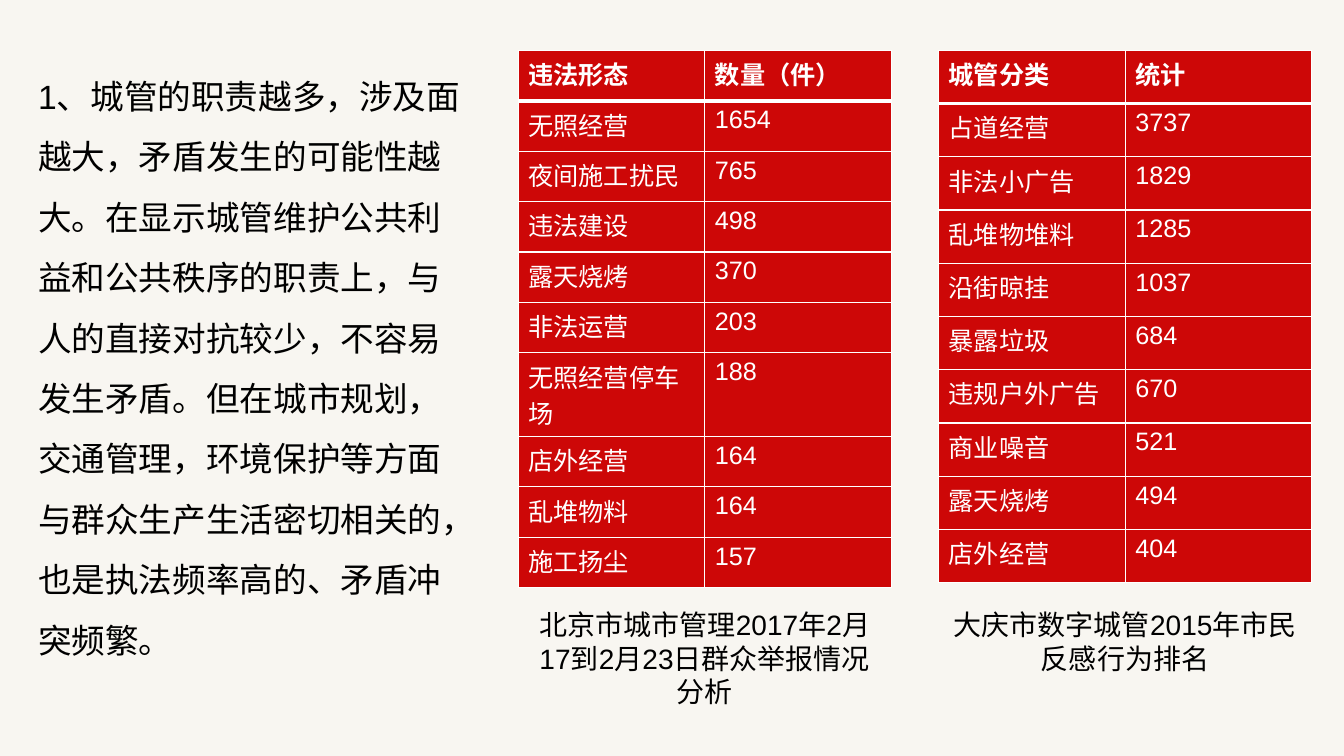
import pptx
import pptx.dml.color
import pptx.enum.text
import pptx.oxml
import pptx.oxml.ns
import pptx.util
from pptx.util import Inches

COLORS = {"paper": "F8F6F1", "red": "CD0707", "white": "FFFFFF", "black": "000000"}
FONT = "Arial"
TABLE_WIDTH = 3.7
CHARACTERS_PER_LINE = 6
EXTRA_LINE_HEIGHT = 0.33

ARGUMENT = (
    "1、城管的职责越多，涉及面越大，矛盾发生的可能性越大。"
    "在显示城管维护公共利益和公共秩序的职责上，与人的直接对抗较少，不容易发生矛盾。"
    "但在城市规划，交通管理，环境保护等方面与群众生产生活密切相关的，"
    "也是执法频率高的、矛盾冲突频繁。"
)
BEIJING_REPORTS = [
    ("违法形态", "数量（件）"),
    ("无照经营", "1654"),
    ("夜间施工扰民", "765"),
    ("违法建设", "498"),
    ("露天烧烤", "370"),
    ("非法运营", "203"),
    ("无照经营停车场", "188"),
    ("店外经营", "164"),
    ("乱堆物料", "164"),
    ("施工扬尘", "157"),
]
DAQING_RANKING = [
    ("城管分类", "统计"),
    ("占道经营", "3737"),
    ("非法小广告", "1829"),
    ("乱堆物堆料", "1285"),
    ("沿街晾挂", "1037"),
    ("暴露垃圾", "684"),
    ("违规户外广告", "670"),
    ("商业噪音", "521"),
    ("露天烧烤", "494"),
    ("店外经营", "404"),
]


def rgb(name):
    """Return the named colour."""
    return pptx.dml.color.RGBColor.from_string(COLORS[name])


def add_span(para, text, size, color, bold=False):
    """Add one formatted run to a paragraph."""
    span = para.add_run()
    span.text = text
    span.font.name = FONT
    span.font.size = pptx.util.Pt(size)
    span.font.bold = bold
    span.font.color.rgb = rgb(color)


def add_text(page, text, left, top, width, height, size):
    """Add a wrapped text box and return it."""
    box = page.shapes.add_textbox(Inches(left), Inches(top), Inches(width), Inches(height))
    box.text_frame.word_wrap = True
    add_span(box.text_frame.paragraphs[0], text, size, "black")
    return box


def add_caption(page, text, left, height):
    """Add a centred caption below a table."""
    box = add_text(page, text, left, 5.98, TABLE_WIDTH, height, 20)
    box.text_frame.auto_size = pptx.enum.text.MSO_AUTO_SIZE.SHAPE_TO_FIT_TEXT
    box.text_frame.paragraphs[0].alignment = pptx.enum.text.PP_ALIGN.CENTER


def set_borders(cell, top, bottom):
    """Draw white cell borders with the given top and bottom widths."""
    properties = cell._tc.get_or_add_tcPr()
    for side, width in (("L", 1), ("R", 1), ("T", top), ("B", bottom)):
        properties.append(pptx.oxml.parse_xml(
            f'<a:ln{side} {pptx.oxml.ns.nsdecls("a")} w="{pptx.util.Pt(width)}">'
            f'<a:solidFill><a:srgbClr val="{COLORS["white"]}"/></a:solidFill></a:ln{side}>'
        ))


def add_red_table(page, records, left, single_line_height):
    """Add a red table, given its height if every row held a single line."""
    row_height = single_line_height / len(records)
    heights = [
        row_height + (EXTRA_LINE_HEIGHT if len(label) > CHARACTERS_PER_LINE else 0)
        for label, _ in records
    ]
    frame = page.shapes.add_table(
        len(records), 2, Inches(left), Inches(0.5),
        Inches(TABLE_WIDTH), Inches(sum(heights)),
    )
    table = frame.table
    for row_index, record in enumerate(records):
        table.rows[row_index].height = Inches(heights[row_index])
        for column_index, text in enumerate(record):
            cell = table.cell(row_index, column_index)
            set_borders(cell, 3 if row_index == 1 else 1, 3 if row_index == 0 else 1)
            cell.fill.solid()
            cell.fill.fore_color.rgb = rgb("red")
            add_span(cell.text_frame.paragraphs[0], text, 18, "white", row_index == 0)


def main():
    """Build and save the slide."""
    deck = pptx.Presentation()
    deck.slide_width = Inches(13.33)
    deck.slide_height = Inches(7.5)
    page = deck.slides.add_slide(deck.slide_layouts[6])
    page.background.fill.solid()
    page.background.fill.fore_color.rgb = rgb("paper")

    argument = add_text(page, ARGUMENT, 0.28, 0.5, 4.45, 6, 24)
    argument.text_frame.paragraphs[0].line_spacing = 1.5

    add_red_table(page, BEIJING_REPORTS, 5.14, 5)
    add_caption(page, "北京市城市管理2017年2月17到2月23日群众举报情况分析", 5.14, 1.1)
    add_red_table(page, DAQING_RANKING, 9.31, 5.28)
    add_caption(page, "大庆市数字城管2015年市民反感行为排名", 9.31, 0.77)
    deck.save("out.pptx")


if __name__ == "__main__":
    main()
